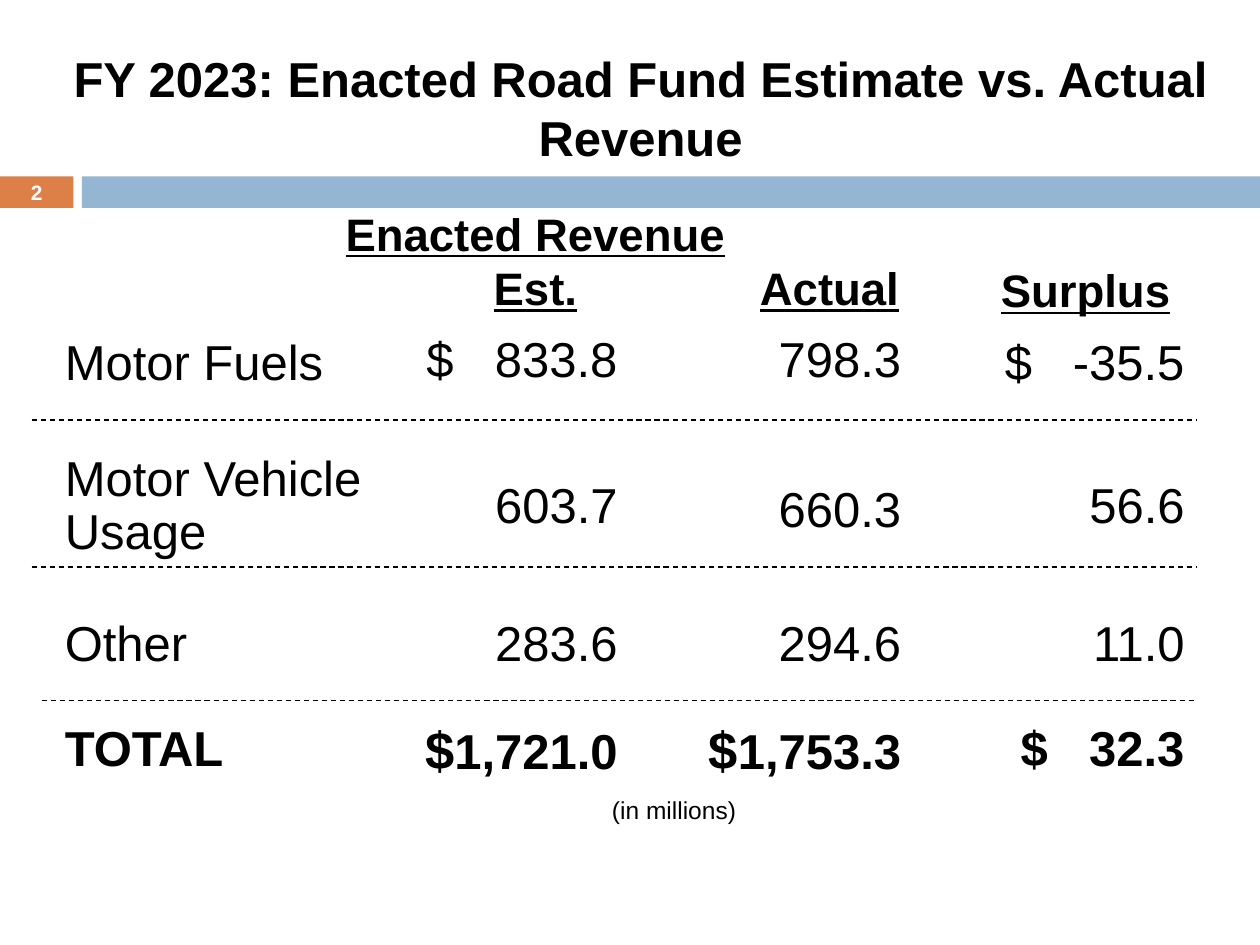
from dataclasses import dataclass

from lxml.etree import SubElement
from pptx import Presentation
from pptx.dml.color import RGBColor
from pptx.enum.dml import MSO_LINE
from pptx.enum.shapes import MSO_CONNECTOR, MSO_SHAPE
from pptx.enum.text import MSO_ANCHOR, MSO_AUTO_SIZE, PP_ALIGN
from pptx.oxml.ns import qn
from pptx.slide import Slide
from pptx.util import Emu, Inches, Pt

# The slide is a grid of 120 columns by 90 rows, twelve to the inch.
CELL = Inches(1) / 12
COLUMNS, ROWS = 120, 90
INSET = 1.2
AMOUNT_WIDTH = 21
AMOUNT_LEFTS = (39, 66, 93)


@dataclass(frozen=True)
class Theme:
    font: str = "Arial"
    ink: RGBColor = RGBColor(0x00, 0x00, 0x00)
    paper: RGBColor = RGBColor(0xFF, 0xFF, 0xFF)
    orange: RGBColor = RGBColor(0xDD, 0x80, 0x47)
    blue: RGBColor = RGBColor(0x94, 0xB6, 0xD2)
    body: float = 28
    heading: float = 26
    total_sign: float = 30
    note: float = 14
    number: float = 11.9


THEME = Theme()


@dataclass(frozen=True)
class Area:
    left: float
    top: float
    width: float
    height: float

    def lengths(self) -> tuple[Emu, ...]:
        return tuple(map(grid, (self.left, self.top, self.width, self.height)))


@dataclass(frozen=True)
class Span:
    text: str
    size: float = THEME.body
    bold: bool = False
    underline: bool = False
    color: RGBColor = THEME.ink


@dataclass(frozen=True)
class Amount:
    """One figure; sign_inset is where a detached dollar sign starts."""
    spans: tuple[Span, ...]
    top: float
    height: float = 6.8
    sign_inset: float | None = None


@dataclass(frozen=True)
class RevenueRow:
    label: Span
    label_area: Area
    amounts: tuple[Amount, Amount, Amount]
    wrap: bool = False
    line_spacing: float | None = None


@dataclass(frozen=True)
class Rule:
    left: float
    top: float
    right: float = 114


def grid(cells: float) -> Emu:
    return Emu(round(cells * CELL))


def plain(text: str, top: float) -> Amount:
    return Amount((Span(text),), top)


def total(text: str, height: float) -> Amount:
    return Amount((Span("$", THEME.total_sign, True), Span(text, bold=True)), 67.7, height)


TITLE = Span("FY 2023: Enacted Road Fund Estimate vs. Actual Revenue", bold=True)
HEADINGS = (
    ("Enacted Revenue Est.", Area(30, 19, 42, 11.8)),
    ("Actual", Area(66, 24.2, 26, 6.5)),
    ("Surplus", Area(91.4, 24.4, 24, 6.5)),
)
REVENUE_ROWS = (
    RevenueRow(
        Span("Motor Fuels"), Area(5, 31, 27.4, 6.8),
        (Amount((Span("$\t833.8"),), 30.7, sign_inset=1.6),
         plain("798.3", 30.7),
         Amount((Span("$\t-35.5"),), 31, sign_inset=2.7)),
    ),
    RevenueRow(
        Span("Motor Vehicle\vUsage"), Area(5, 42.7, 32, 11.3),
        (plain("603.7", 44.6), plain("660.3", 45), plain("56.6", 44.6)),
        wrap=True, line_spacing=0.9,
    ),
    RevenueRow(
        Span("Other"), Area(5, 57.7, 14.3, 6.8),
        (plain("283.6", 57.7), plain("294.6", 57.7), plain("11.0", 57.7)),
    ),
    RevenueRow(
        Span("TOTAL", bold=True), Area(5, 67.7, 17.8, 6.8),
        (total("1,721.0", 13), total("1,753.3", 7.3),
         Amount((Span("$\t32.3", bold=True),), 67.7, sign_inset=4.2)),
    ),
)
RULES = (Rule(3, 40), Rule(3, 54), Rule(4, 66.7))


def add_text(slide: Slide, area: Area, spans: tuple[Span, ...],
             align: PP_ALIGN = PP_ALIGN.CENTER, wrap: bool = True):
    box = slide.shapes.add_textbox(*area.lengths())
    frame = box.text_frame
    frame.word_wrap = wrap
    frame.auto_size = MSO_AUTO_SIZE.SHAPE_TO_FIT_TEXT
    para = frame.paragraphs[0]
    para.alignment = align
    for number, item in enumerate(spans):
        for part, text in enumerate(item.text.split("\v")):
            if part:
                para.add_line_break()
            span = para.add_run()
            span.text = text
            font = span.font
            font.name, font.size = THEME.font, Pt(item.size)
            font.bold, font.underline = item.bold, item.underline
            font.color.rgb = item.color
    return box


def add_amount(slide: Slide, left: float, amount: Amount) -> None:
    """Right-align a figure, with a right tab where the dollar sign stands apart."""
    area = Area(left, amount.top, AMOUNT_WIDTH, amount.height)
    if amount.sign_inset is None:
        add_text(slide, area, amount.spans, PP_ALIGN.RIGHT)
        return
    frame = add_text(slide, area, amount.spans, PP_ALIGN.LEFT).text_frame
    frame.margin_left, frame.margin_right = grid(amount.sign_inset), 0
    stops = SubElement(frame.paragraphs[0]._p.get_or_add_pPr(), qn("a:tabLst"))
    position = grid(AMOUNT_WIDTH - INSET - amount.sign_inset)
    SubElement(stops, qn("a:tab"), pos=str(int(position)), algn="r")


def add_row(slide: Slide, row: RevenueRow) -> None:
    label = add_text(slide, row.label_area, (row.label,), PP_ALIGN.LEFT, row.wrap)
    if row.line_spacing:
        label.text_frame.paragraphs[0].line_spacing = row.line_spacing
    for left, amount in zip(AMOUNT_LEFTS, row.amounts):
        add_amount(slide, left, amount)


def add_band(slide: Slide, area: Area, color: RGBColor) -> None:
    band = slide.shapes.add_shape(MSO_SHAPE.RECTANGLE, *area.lengths())
    band.shadow.inherit = False
    band.fill.solid()
    band.fill.fore_color.rgb = color
    band.line.fill.background()


def add_rule(slide: Slide, rule: Rule) -> None:
    ends = map(grid, (rule.left, rule.top, rule.right, rule.top))
    line = slide.shapes.add_connector(MSO_CONNECTOR.STRAIGHT, *ends)
    line.line.color.rgb = THEME.ink
    line.line.width = Pt(0.75)
    line.line.dash_style = MSO_LINE.DASH
    SubElement(line._element.spPr, qn("a:effectLst"))


def main() -> None:
    deck = Presentation()
    deck.slide_width, deck.slide_height = grid(COLUMNS), grid(ROWS)
    page = deck.slides.add_slide(deck.slide_layouts[6])
    add_band(page, Area(0, 16.8, 7, 3), THEME.orange)
    add_band(page, Area(7.8, 16.8, COLUMNS - 7.8, 3), THEME.blue)
    add_text(page, Area(2, 4, COLUMNS - 2, 12.5), (TITLE,))
    for text, area in HEADINGS:
        add_text(page, area, (Span(text, THEME.heading, True, True),))
    for row in REVENUE_ROWS:
        add_row(page, row)
    for rule in RULES:
        add_rule(page, rule)
    add_text(page, Area(48.2, 75.1, 32, 4.1), (Span("(in millions)", THEME.note),))
    number = Span("2", THEME.number, True, color=THEME.paper)
    frame = add_text(page, Area(0, 16.7, 7, 3.2), (number,)).text_frame
    frame.auto_size = MSO_AUTO_SIZE.NONE
    frame.vertical_anchor = MSO_ANCHOR.MIDDLE
    deck.save("out.pptx")


if __name__ == "__main__":
    main()
